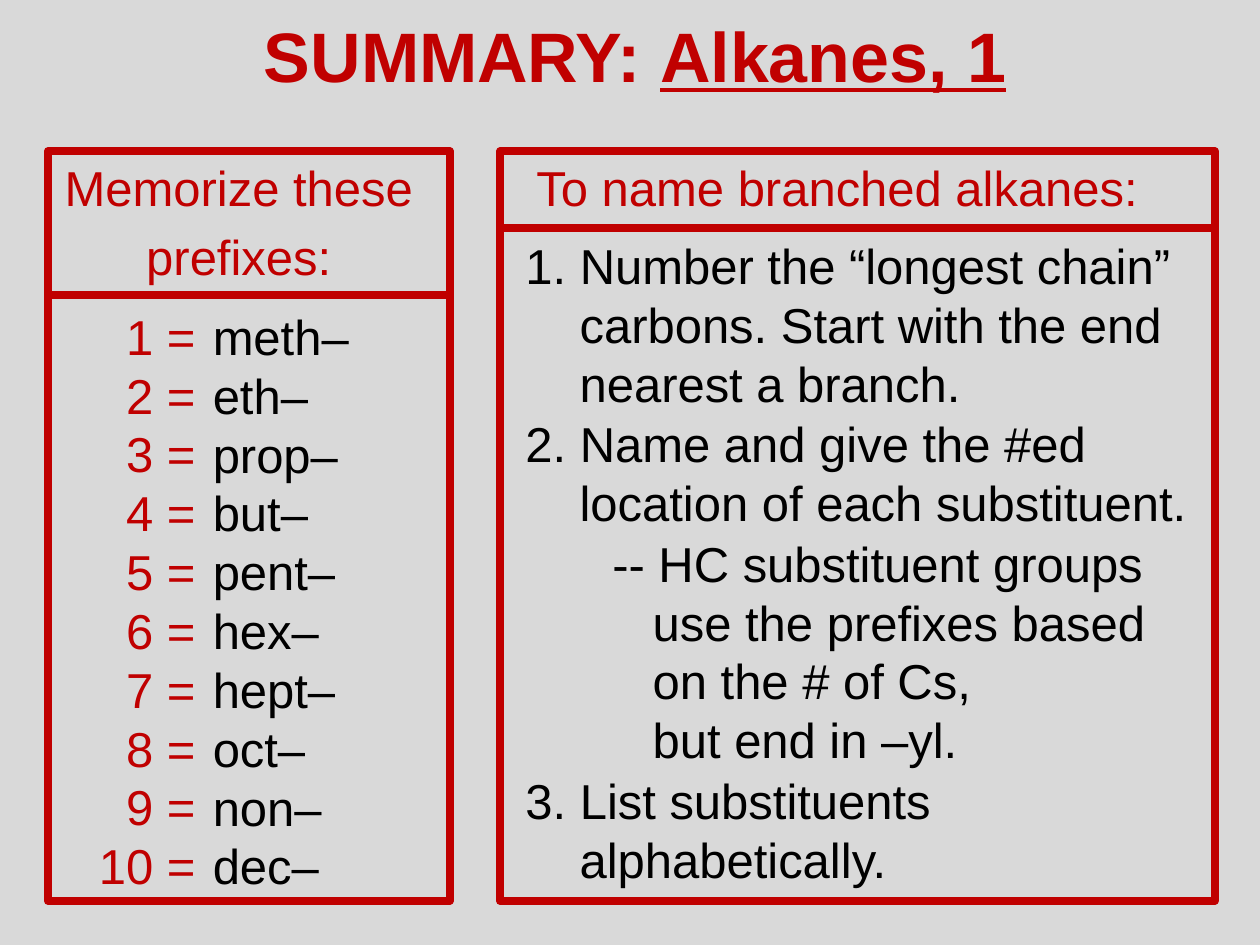
from lxml.etree import SubElement
from pptx import Presentation
from pptx.dml.color import RGBColor
from pptx.enum.shapes import MSO_CONNECTOR as Connector, MSO_SHAPE as Shape
from pptx.enum.text import MSO_ANCHOR as Anchor, MSO_AUTO_SIZE as AutoSize, PP_ALIGN as Align
from pptx.oxml.ns import qn
from pptx.util import Inches, Pt

RED, BLACK, GREY = "C00000", "000000", "D9D9D9"

PREFIXES = ["meth–", "eth–", "prop–", "but–", "pent–",
            "hex–", "hept–", "oct–", "non–", "dec–"]
# text, left margin of wrapped lines, first-line offset, space before
STEPS = [
    ("1. Number the “longest chain” carbons. Start with the end nearest a branch.", 0.43, -0.43, 0),
    ("2. Name and give the #ed location of each substituent.", 0.43, -0.43, 1),
    ("-- HC substituent groups use the prefixes based on the # of Cs,", 1.01, -0.32, 1),
    ("but end in –yl.", 1.01, 0, 0),
    ("3. List substituents alphabetically.", 0.43, -0.43, 1),
]
PANEL_TOP, PANEL_HEIGHT = 1.2, 5.95
# left, width, height of the heading area
PANELS = [(0.38, 3.19, 1.14), (3.97, 5.67, 0.61)]
ROWS_TOP, ROW_PITCH, ROW_HEIGHT = 2.38, 0.467, 0.57


def color(value):
    return RGBColor.from_string(value)


def place(shape, left, top, width, height):
    shape.left, shape.top = Inches(left), Inches(top)
    shape.width, shape.height = Inches(width), Inches(height)


def prepare(shape, anchor=Anchor.TOP, wrap=True):
    frame = shape.text_frame
    frame.word_wrap = wrap
    frame.auto_size = AutoSize.NONE
    frame.vertical_anchor = anchor
    return frame


def add_run(paragraph, text, fill, size=28, bold=False, underline=False):
    run = paragraph.add_run()
    run.text = text
    font = run.font
    font.name, font.size, font.bold, font.underline = "Arial", Pt(size), bold, underline
    font.color.rgb = color(fill)


def write_lines(frame, lines, fill, align=Align.LEFT, gap=0):
    for index, line in enumerate(lines):
        paragraph = frame.add_paragraph() if index else frame.paragraphs[0]
        paragraph.alignment = align
        paragraph.space_before = Pt(gap if index else 0)
        add_run(paragraph, line, fill)


def add_text(slide, box, lines, fill, align=Align.LEFT, gap=0, anchor=Anchor.TOP, wrap=True):
    shape = slide.shapes.add_textbox(*map(Inches, box))
    write_lines(prepare(shape, anchor, wrap), lines, fill, align, gap)


def add_title(slide):
    title = slide.shapes.title
    place(title, 1.97, 0.05, 6.14, 0.77)
    paragraph = prepare(title, wrap=False).paragraphs[0]
    paragraph.alignment = Align.CENTER
    add_run(paragraph, "SUMMARY: ", RED, 40, bold=True)
    add_run(paragraph, "Alkanes, 1", RED, 40, bold=True, underline=True)


def add_steps(slide):
    body = slide.placeholders[1]
    place(body, 4.07, 1.82, 5.51, 5.28)
    frame = prepare(body)
    for index, (text, margin, offset, gap) in enumerate(STEPS):
        paragraph = frame.add_paragraph() if index else frame.paragraphs[0]
        paragraph.space_before = Pt(gap)
        properties = paragraph._p.get_or_add_pPr()
        properties.set("marL", str(Inches(margin)))
        properties.set("indent", str(Inches(offset)))
        SubElement(properties, qn("a:buNone"))
        add_run(paragraph, text, BLACK)


def add_prefixes(slide):
    numbers = [f"{number} =" for number in range(1, len(PREFIXES) + 1)]
    add_text(slide, (0.68, ROWS_TOP, 0.97, 4.77), numbers, RED, Align.RIGHT,
             anchor=Anchor.MIDDLE, wrap=False)
    for row, prefix in enumerate(PREFIXES):
        add_text(slide, (1.59, ROWS_TOP + row * ROW_PITCH, 1.28, ROW_HEIGHT), [prefix], BLACK,
                 anchor=Anchor.MIDDLE, wrap=False)


def style_line(shape):
    shape.line.color.rgb = color(RED)
    shape.line.width = Pt(4.5)


def add_panel(slide, left, width, heading_height):
    frame = slide.shapes.add_shape(
        Shape.RECTANGLE, *map(Inches, (left, PANEL_TOP, width, PANEL_HEIGHT)))
    frame.shadow.inherit = False
    frame.fill.background()
    style_line(frame)
    y = PANEL_TOP + heading_height
    divider = slide.shapes.add_connector(
        Connector.STRAIGHT, *map(Inches, (left, y, left + width, y)))
    SubElement(divider._element.spPr, qn("a:effectLst"))
    style_line(divider)


def main():
    presentation = Presentation()
    presentation.slide_width, presentation.slide_height = Inches(10), Inches(7.5)
    slide = presentation.slides.add_slide(presentation.slide_layouts[1])
    slide.background.fill.solid()
    slide.background.fill.fore_color.rgb = color(GREY)

    add_title(slide)
    add_text(slide, (0.38, PANEL_TOP, 3.03, 1.14), ["Memorize these", "prefixes:"], RED,
             Align.CENTER, gap=5.6)
    add_prefixes(slide)
    add_text(slide, (4.16, PANEL_TOP, 5.06, ROW_HEIGHT), ["To name branched alkanes:"], RED)
    add_steps(slide)
    for panel in PANELS:
        add_panel(slide, *panel)

    presentation.save("out.pptx")


if __name__ == "__main__":
    main()
